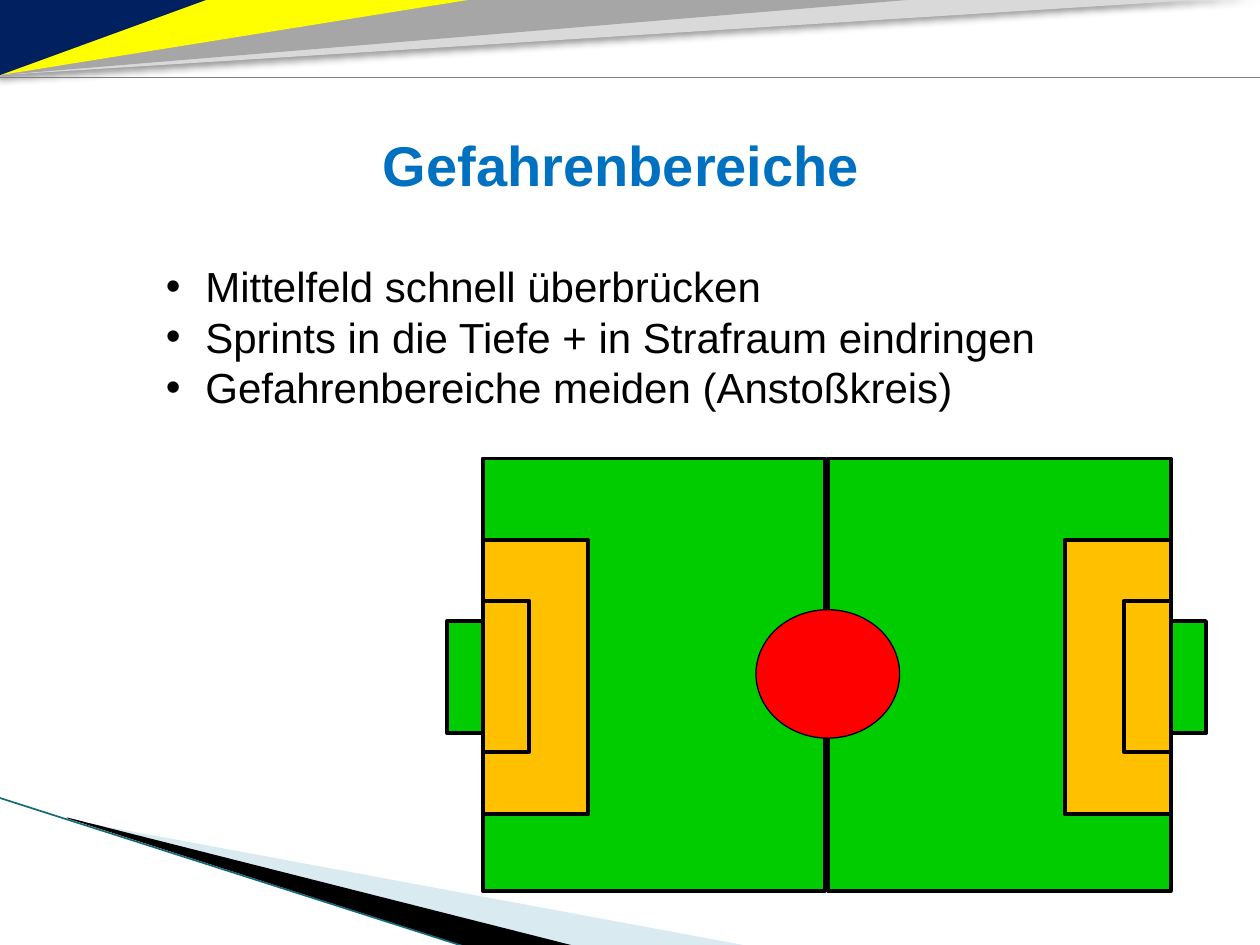
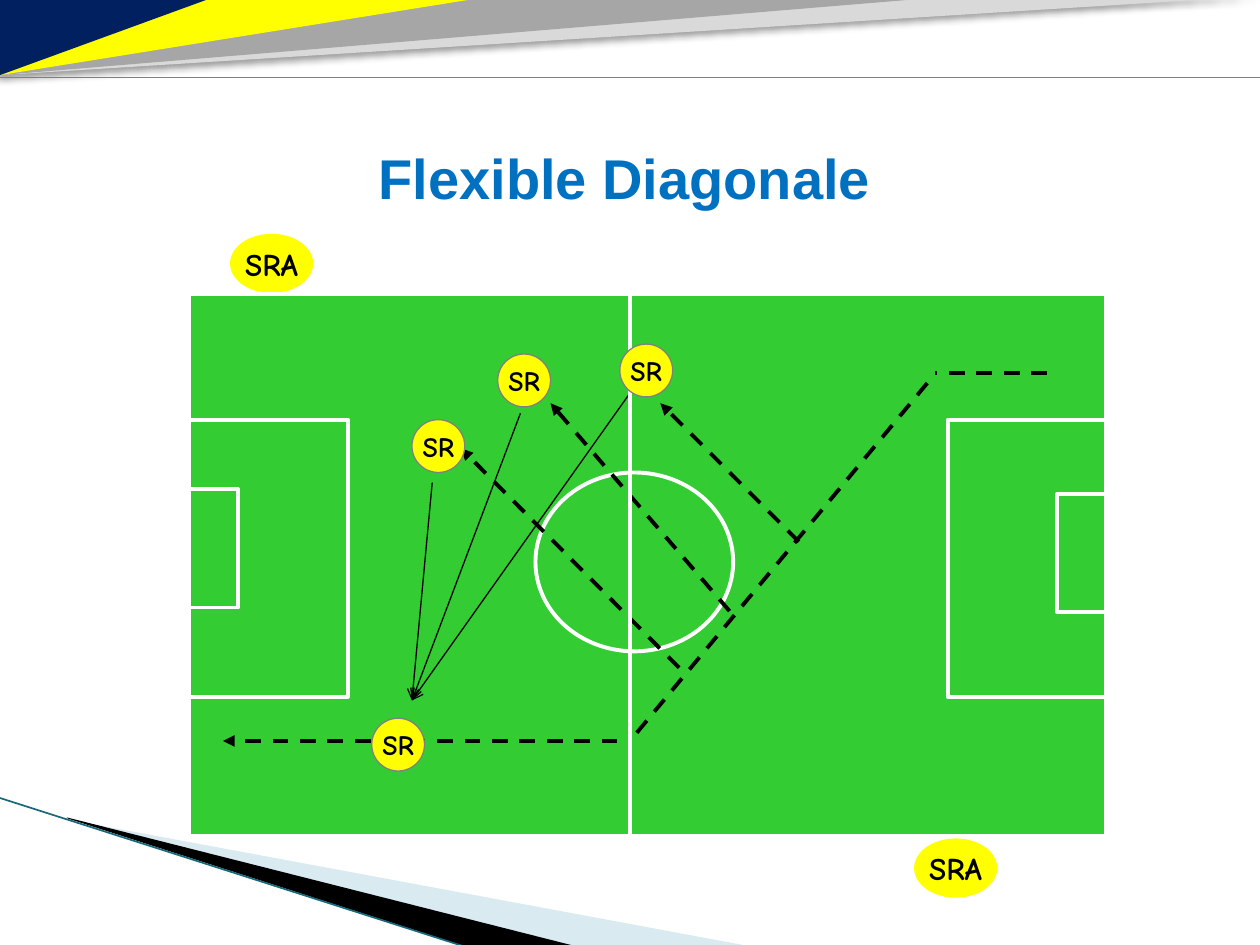
"""Builds two referee-training slides on danger zones and the flexible diagonal."""
from lxml.etree import SubElement
from pptx import Presentation
from pptx.dml.color import RGBColor
from pptx.enum.dml import MSO_LINE
from pptx.enum.shapes import MSO_CONNECTOR, MSO_SHAPE
from pptx.enum.text import MSO_ANCHOR, PP_ALIGN
from pptx.oxml.ns import qn
from pptx.util import Pt

COLORS = {
    "navy": "002060", "yellow": "FFFF00", "grey": "A6A6A6", "silver": "D9D9D9",
    "rule": "808080", "teal": "16697A", "ice": "A0CBDC", "title": "0070C0",
    "black": "000000", "white": "FFFFFF", "red": "FF0000", "orange": "FFC000",
    "turf": "00CC00", "meadow": "33CC33",
}
SLIDE_WIDTH, SLIDE_HEIGHT = 720, 540


def rgb(name):
    return RGBColor.from_string(COLORS[name])


def add_shadow(effects, direction):
    shadow = SubElement(effects, qn("a:outerShdw"), blurRad=str(Pt(4)), dist=str(Pt(3)),
                        dir=str(direction * 60000), algn="tl", rotWithShape="0")
    black = SubElement(shadow, qn("a:srgbClr"), val=COLORS["black"])
    SubElement(black, qn("a:alpha"), val="40000")


def paint(shape, fill, line=None, weight=0.75):
    shape.shadow.inherit = False
    shape.fill.solid()
    shape.fill.fore_color.rgb = rgb(fill)
    if line:
        shape.line.color.rgb = rgb(line)
        shape.line.width = Pt(weight)
    else:
        shape.line.fill.background()
    return shape


def add_figure(shapes, kind, box, fill, line=None, weight=0.75):
    return paint(shapes.add_shape(kind, *map(Pt, box)), fill, line, weight)


def add_line(shapes, start, end, color, weight, dashed=False, head=None, shadow=None):
    line = shapes.add_connector(MSO_CONNECTOR.STRAIGHT, *map(Pt, start + end))
    line.line.color.rgb = rgb(color)
    line.line.width = Pt(weight)
    if dashed:
        line.line.dash_style = MSO_LINE.DASH
    if head:
        SubElement(line._element.spPr.find(qn("a:ln")), qn("a:tailEnd"), type=head)
    effects = SubElement(line._element.spPr, qn("a:effectLst"))
    if shadow is not None:
        add_shadow(effects, shadow)


def add_run(paragraph, text, font, size, color, bold=False):
    run = paragraph.add_run()
    run.text = text
    run.font.name = font
    run.font.size = Pt(size)
    run.font.color.rgb = rgb(color)
    run.font.bold = bold


def add_text_frame(slide, box):
    frame = slide.shapes.add_textbox(*map(Pt, box)).text_frame
    frame.word_wrap = True
    return frame


def add_header(slide, box):
    left, top, width, height = box
    for name, length in (("silver", width), ("grey", 546), ("yellow", 281.5), ("navy", 124)):
        unrotated = (left + (length - height) / 2, top + (height - length) / 2, height, length)
        wedge = add_figure(slide.shapes, MSO_SHAPE.RIGHT_TRIANGLE, unrotated, name)
        wedge.rotation = 90
        if name == "silver":
            add_shadow(wedge._element.spPr.find(qn("a:effectLst")), 135)
    rule_y = top + height + 1.4
    add_line(slide.shapes, (left + width, rule_y), (left, rule_y), "rule", 0.75, shadow=45)


def add_corner(slide, box):
    left, top, width, height = box
    wedges = (
        ("ice", [(39.6, 12.7), (width, height), (328.3, height), (39.6, 12)]),
        ("black", [(38.2, 11.3), (329, height), (267.8, height + 0.7), (38.9, 12)]),
    )
    for name, outline in wedges:
        first, *rest = [(Pt(left + x), Pt(top + y)) for x, y in outline]
        builder = slide.shapes.build_freeform(*first)
        builder.add_line_segments(rest, close=True)
        wedge = paint(builder.convert_to_shape(), name)
        if name == "ice":
            color = wedge._element.spPr.find(qn("a:solidFill"))[0]
            SubElement(color, qn("a:alpha"), val="40000")
    add_line(slide.shapes, (left - 0.7, top), (left + 267, top + height + 0.7), "teal", 0.95)


def add_title(slide, box, text):
    title = add_text_frame(slide, box).paragraphs[0]
    title.alignment = PP_ALIGN.CENTER
    title.line_spacing = 0.9
    add_run(title, text, "Arial", 32, "title", bold=True)


def add_advice(slide, box, items):
    frame = add_text_frame(slide, box)
    for index, item in enumerate(items):
        advice = frame.add_paragraph() if index else frame.paragraphs[0]
        properties = advice._p.get_or_add_pPr()
        properties.set("marL", str(Pt(22.5)))
        properties.set("indent", str(Pt(-22.5)))
        SubElement(properties, qn("a:buFont"), typeface="Arial")
        SubElement(properties, qn("a:buChar"), char="•")
        add_run(advice, item, "Arial", 24, "black")


def add_zones(shapes, box, zones, line, mirrored):
    """Places zones by their depth from the goal line, on the left or mirrored to the right."""
    left, top, width, _ = box
    for inset, drop, depth, height, fill in zones:
        x = left + (width - inset - depth if mirrored else inset)
        add_figure(shapes, MSO_SHAPE.RECTANGLE, (x, top + drop, depth, height), fill, line, 2.25)


def add_danger_pitch(slide, box):
    left, top, width, height = box
    zones = (
        (0, 0, width / 2 - 1, height, "turf"),
        (0, 46.8, 60.5, 156.2, "orange"),
        (0, 81.4, 26.6, 86.4, "orange"),
        (-20.2, 92.9, 20.2, 64.1, "turf"),
    )
    for mirrored in (False, True):
        half = slide.shapes.add_group_shape()
        add_zones(half.shapes, box, zones, "black", mirrored)
    kickoff_circle = (left + 156.2, top + 86.4, 82.1, 73.4)
    add_figure(slide.shapes, MSO_SHAPE.OVAL, kickoff_circle, "red", "black")


def add_marker(shapes, box, label, size, line):
    marker = add_figure(shapes, MSO_SHAPE.OVAL, box, "yellow", line)
    frame = marker.text_frame
    frame.word_wrap = False
    frame.vertical_anchor = MSO_ANCHOR.MIDDLE
    frame.paragraphs[0].alignment = PP_ALIGN.CENTER
    add_run(frame.paragraphs[0], label, "Comic Neue", size, "black", bold=True)


def add_diagonal_pitch(slide, box):
    left, top, width, height = box

    def at(point):
        return left + point[0], top + point[1]

    def add_referee(shapes, point):
        add_marker(shapes, at(point) + (30.2, 30.2), "SR", 16, "rule")

    for assistant in ((23.8, -34), (414.7, 311.5)):
        add_marker(slide.shapes, at(assistant) + (46.8, 33.1), "SRA", 18, "yellow")
    add_figure(slide.shapes, MSO_SHAPE.RECTANGLE, box, "meadow", "white", 2.25)
    for mirrored, goal_area_top in ((False, 111.5), (True, 114.2)):
        zones = ((0, 71.8, 90.7, 158.4, "meadow"), (0, goal_area_top, 28.1, 67.7, "meadow"))
        add_zones(slide.shapes, box, zones, "white", mirrored)
    centre_circle = at((198, 102)) + (113, 102.2)
    add_figure(slide.shapes, MSO_SHAPE.OVAL, centre_circle, "meadow", "white", 2.25)

    diagonal = (
        ((490.3, 45.1), (426.2, 45.1), None),
        ((421.9, 50.9), (252, 255.4), None),
        ((244.8, 255.4), (19.4, 255.4), "triangle"),
    )
    for start, end, head in diagonal:
        add_line(slide.shapes, at(start), at(end), "black", 2.25, dashed=True, head=head)
    add_referee(slide.shapes, (104.4, 242.4))

    detours = (
        ((280.1, 213.6), (155.5, 88.3)),
        ((308.9, 181.2), (206.6, 62.4)),
        ((348.5, 141.6), (269.3, 62.4)),
    )
    movements = slide.shapes.add_group_shape().shapes
    for start, end in detours:
        add_line(movements, at(start), at(end), "black", 2.25, dashed=True, head="triangle")
    for start in ((139, 107.8), (189.4, 68.2), (252, 56.6)):
        add_line(movements, at(start), at((127.4, 232.3)), "black", 0.75, head="arrow")

    add_line(slide.shapes, at((252, 0)), at((252, height)), "white", 2.25)
    referees = slide.shapes.add_group_shape().shapes
    for position in ((176.4, 34.3), (246.2, 28.6), (127.4, 71.8)):
        add_referee(referees, position)


def add_base_slide(presentation):
    slide = presentation.slides.add_slide(presentation.slide_layouts[6])
    add_corner(slide, (0, 455.8, 428.4, 84.9))
    add_header(slide, (0, -2.3, SLIDE_WIDTH, 45.2))
    return slide


def build_danger_zones(presentation):
    slide = add_base_slide(presentation)
    add_danger_pitch(slide, (275.8, 262, 393.1, 247))
    add_title(slide, (206, 75.6, 298, 42.5), "Gefahrenbereiche")
    add_advice(slide, (87.8, 145.4, 590.4, 116.6), (
        "Mittelfeld schnell überbrücken",
        "Sprints in die Tiefe + in Strafraum eindringen",
        "Gefahrenbereiche meiden (Anstoßkreis)",
    ))


def build_flexible_diagonal(presentation):
    slide = add_base_slide(presentation)
    add_diagonal_pitch(slide, (108, 168, 524.2, 309.6))
    add_title(slide, (126, 82.8, 462, 54), "Flexible Diagonale")


def main():
    presentation = Presentation()
    presentation.slide_width = Pt(SLIDE_WIDTH)
    presentation.slide_height = Pt(SLIDE_HEIGHT)
    build_danger_zones(presentation)
    build_flexible_diagonal(presentation)
    presentation.save("out.pptx")


if __name__ == "__main__":
    main()
